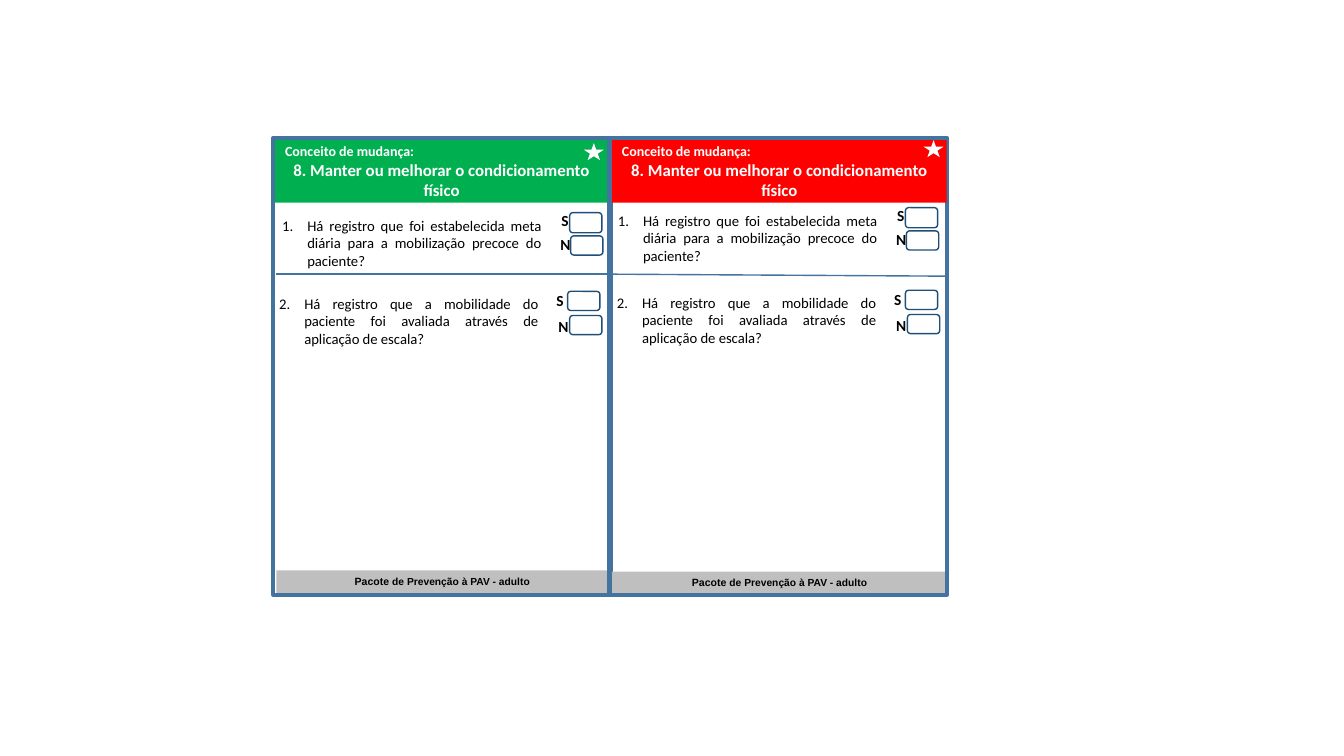
from dataclasses import dataclass

from lxml.etree import SubElement
from pptx import Presentation
from pptx.dml.color import RGBColor
from pptx.enum.shapes import MSO_CONNECTOR, MSO_SHAPE
from pptx.enum.text import MSO_ANCHOR, MSO_AUTO_SIZE, PP_ALIGN
from pptx.oxml.ns import qn
from pptx.util import Inches, Length, Pt

HUES = {
    "frame": "43739E",
    "box": "1F4E79",
    "green": "00B050",
    "red": "FF0000",
    "gray": "BFBFBF",
    "white": "FFFFFF",
    "black": "000000",
}
TITLE = "8. Manter ou melhorar o condicionamento físico"
ASKS = (
    "Há registro que foi estabelecida meta diária para a mobilização precoce do paciente?",
    "Há registro que a mobilidade do paciente foi avaliada através de aplicação de escala?",
)
FONTS = {
    "lead": {"name": "Calibri", "size": Pt(10), "bold": True},
    "title": {"name": "Calibri", "size": Pt(12), "bold": True},
    "ask": {"name": "Calibri", "size": Pt(10.5), "bold": False},
    "mark": {"name": "Calibri", "size": Pt(11), "bold": True},
    "foot": {"name": "Arial", "size": Pt(7.5), "bold": True},
    "tail": {"name": "Arial", "size": Pt(7.3), "bold": True},
}
CELL = Inches(0.1)


@dataclass(frozen=True)
class Area:
    col: float
    row: float
    cols: float
    rows: float


@dataclass(frozen=True)
class Option:
    mark: str
    text: Area
    box: Area


@dataclass(frozen=True)
class Query:
    number: int
    rows: float
    options: tuple[Option, ...]


@dataclass(frozen=True)
class Card:
    hue: str
    frame: Area
    head: Area
    foot: Area
    star: Area
    rule: tuple[float, float, float, float]
    spots: tuple[tuple[float, float], ...]


QUERIES = (
    Query(1, 9.4, (
        Option("S", Area(27.7, 1.8, 2.3, 1.4), Area(29.5, 1.7, 3.2, 2)),
        Option("N", Area(27.6, 4.2, 2.3, 1.2), Area(29.6, 4, 3.2, 1.9)),
    )),
    Query(2, 8.9, (
        Option("S", Area(27.5, 1.7, 2.3, 1.4), Area(29.6, 1.5, 3.2, 1.9)),
        Option("N", Area(27.7, 4.4, 2.3, 1.2), Area(29.8, 3.9, 3.2, 1.9)),
    )),
)
CARDS = (
    Card("green", Area(27.1, 13.7, 33.5, 45.3), Area(27.3, 13.9, 33, 6.2),
         Area(27.4, 56.6, 32.9, 2.3), Area(57.9, 14.2, 2, 1.7),
         (27.4, 27.2, 60.5, 27.2), ((27, 19.4), (26.7, 27.4))),
    Card("red", Area(60.4, 13.7, 33.5, 45.3), Area(60.7, 13.9, 33.2, 6.2),
         Area(60.7, 56.7, 33.2, 2.3), Area(91.6, 13.9, 2, 1.7),
         (60.4, 27.2, 93.9, 27.4), ((60.3, 18.9), (60.2, 27.3))),
)


def grid(*cells: float) -> list[Length]:
    return [Length(round(cell * CELL)) for cell in cells]


def place(area: Area) -> list[Length]:
    return grid(area.col, area.row, area.cols, area.rows)


def shift(area: Area, col: float, row: float) -> Area:
    return Area(area.col + col, area.row + row, area.cols, area.rows)


def adorn(item: object, values: dict) -> None:
    for name, value in values.items():
        setattr(item, name, value)


def tint(hue: str) -> RGBColor:
    return RGBColor.from_string(HUES[hue])


def draw(slide, kind, area: Area, fill: str = "", line: str = "", width: float = 1):
    shape = slide.shapes.add_shape(kind, *place(area))
    shape.shadow.inherit = False
    if fill:
        shape.fill.solid()
        shape.fill.fore_color.rgb = tint(fill)
    else:
        shape.fill.background()
    if line:
        shape.line.color.rgb = tint(line)
        shape.line.width = Pt(width)
    else:
        shape.line.fill.background()
    return shape


def write(para, text: str, font: str, align, hue: str = "black") -> None:
    para.alignment = align
    run = para.add_run()
    run.text = text
    adorn(run.font, FONTS[font])
    run.font.color.rgb = tint(hue)


def label(slide, area: Area, text: str, font: str, align):
    frame = slide.shapes.add_textbox(*place(area)).text_frame
    adorn(frame, {"word_wrap": True, "vertical_anchor": MSO_ANCHOR.MIDDLE})
    write(frame.paragraphs[0], text, font, align)
    return frame.paragraphs[0]


def count(para, number: int) -> None:
    props = para._p.get_or_add_pPr()
    props.set("marL", str(Inches(0.25)))
    props.set("indent", str(-Inches(0.25)))
    SubElement(props, qn("a:buAutoNum"), type="arabicPeriod", startAt=str(number))


def add_query(slide, query: Query, ask: str, col: float, row: float) -> None:
    para = label(slide, Area(col, row, 27.7, query.rows), ask, "ask", PP_ALIGN.JUSTIFY)
    count(para, query.number)
    for option in query.options:
        draw(slide, MSO_SHAPE.ROUNDED_RECTANGLE, shift(option.box, col, row), line="box")
        label(slide, shift(option.text, col, row), option.mark, "mark", PP_ALIGN.CENTER)


def add_foot(slide, area: Area) -> None:
    frame = draw(slide, MSO_SHAPE.RECTANGLE, area, "gray").text_frame
    adorn(frame, {
        "word_wrap": True,
        "vertical_anchor": MSO_ANCHOR.TOP,
        "auto_size": MSO_AUTO_SIZE.SHAPE_TO_FIT_TEXT,
    })
    for text, font in (("Pacote", "foot"), (" de Prevenção à PAV - adulto", "tail")):
        write(frame.paragraphs[0], text, font, PP_ALIGN.CENTER)


def add_head(slide, card: Card) -> None:
    frame = draw(slide, MSO_SHAPE.RECTANGLE, card.head, card.hue).text_frame
    adorn(frame, {"word_wrap": True, "vertical_anchor": MSO_ANCHOR.MIDDLE})
    write(frame.paragraphs[0], "Conceito de mudança:", "lead", PP_ALIGN.LEFT, "white")
    write(frame.add_paragraph(), TITLE, "title", PP_ALIGN.CENTER, "white")
    draw(slide, MSO_SHAPE.STAR_5_POINT, card.star, "white")


def add_rule(slide, ends: tuple[float, float, float, float]) -> None:
    rule = slide.shapes.add_connector(MSO_CONNECTOR.STRAIGHT, *grid(*ends))
    rule.line.color.rgb = tint("frame")
    rule.line.width = Pt(1)
    SubElement(rule._element.spPr, qn("a:effectLst"))


def add_card(slide, card: Card) -> None:
    add_foot(slide, card.foot)
    draw(slide, MSO_SHAPE.RECTANGLE, card.frame, line="frame", width=3)
    add_rule(slide, card.rule)
    for query, ask, spot in zip(QUERIES, ASKS, card.spots):
        add_query(slide, query, ask, *spot)
    add_head(slide, card)


def main() -> None:
    deck = Presentation()
    adorn(deck, {"slide_width": Inches(13.33), "slide_height": Inches(7.5)})
    slide = deck.slides.add_slide(deck.slide_layouts[6])
    for card in CARDS:
        add_card(slide, card)
    deck.save("out.pptx")


if __name__ == "__main__":
    main()
